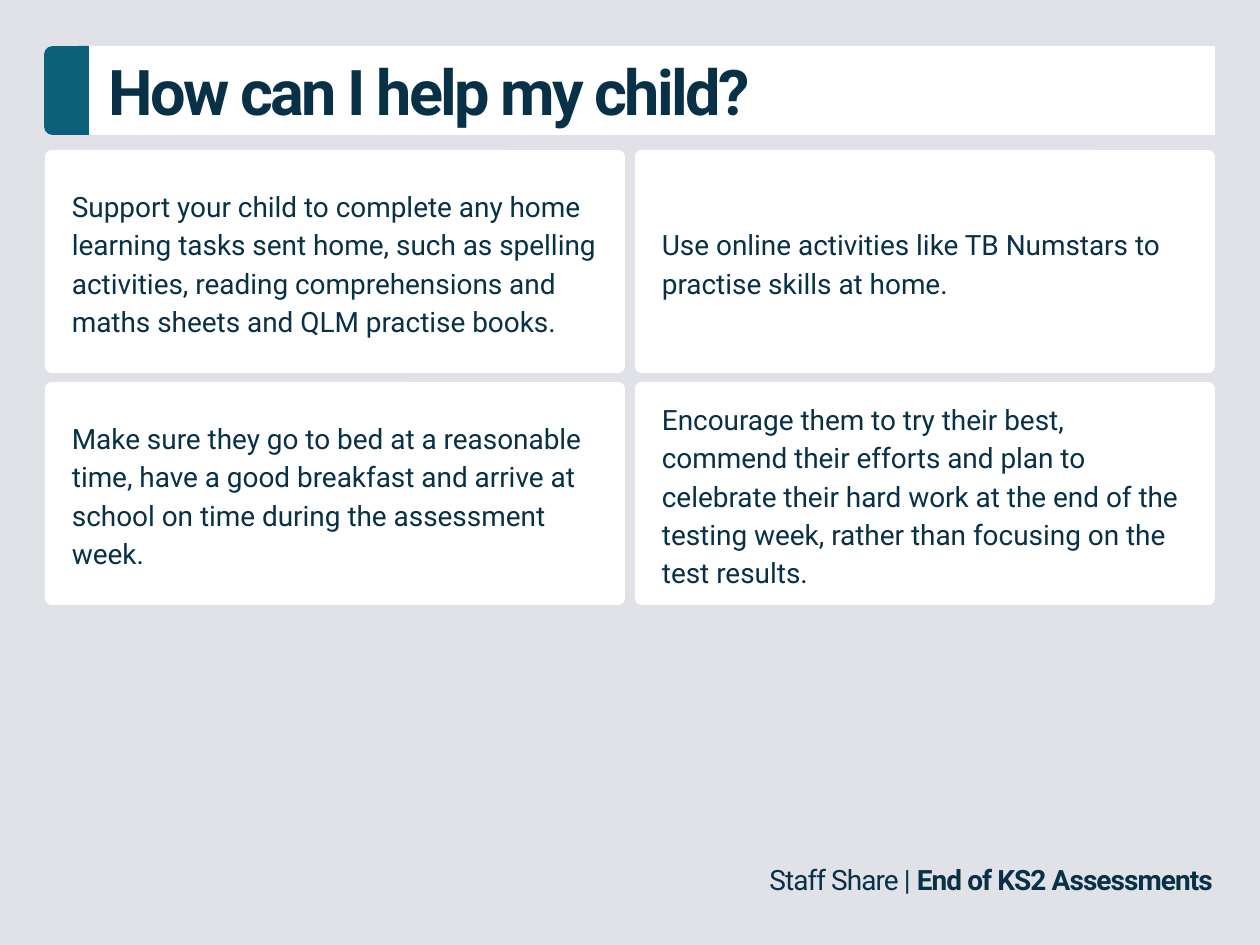
from pptx import Presentation
from pptx.dml.color import RGBColor
from pptx.enum.shapes import MSO_SHAPE
from pptx.enum.text import MSO_ANCHOR, MSO_AUTO_SIZE, PP_ALIGN
from pptx.util import Emu, Pt

NAVY = RGBColor(0x08, 0x31, 0x47)
TEAL = RGBColor(0x0D, 0x60, 0x7A)
WHITE = RGBColor(0xFF, 0xFF, 0xFF)
GREY = RGBColor(0xE1, 0xE2, 0xE7)


def px(*lengths):
    return [Emu(round(length * 914400 / 126)) for length in lengths]


def write(holder, *parts, size=16, bold=(False,), spacing=0, line=1.0, after=0,
          align=PP_ALIGN.LEFT, anchor=MSO_ANCHOR.MIDDLE, insets=(25, 25, 25, 25)):
    frame = holder.text_frame
    frame.word_wrap = True
    frame.auto_size = MSO_AUTO_SIZE.NONE
    frame.vertical_anchor = anchor
    frame.margin_left, frame.margin_top, frame.margin_right, frame.margin_bottom = px(*insets)
    paragraph = frame.paragraphs[0]
    paragraph.alignment = align
    paragraph.line_spacing = line
    paragraph.space_before = Pt(0)
    paragraph.space_after = Pt(after)
    for words, heavy in zip(parts, bold):
        run = paragraph.add_run()
        run.text = words
        run.font.name = "Roboto"
        run.font.size = Pt(size)
        run.font.bold = heavy
        run.font.color.rgb = NAVY
        run._r.get_or_add_rPr().set("spc", str(round(spacing * 100)))


deck = Presentation()
deck.slide_width, deck.slide_height = px(1260, 945)
slide = deck.slides.add_slide(deck.slide_layouts[5])
slide.background.fill.solid()
slide.background.fill.fore_color.rgb = GREY

footer = slide.shapes.add_textbox(*px(247, 857, 979, 47))
write(footer, "Staff Share | ", "End of KS2 Assessments", bold=(False, True),
      spacing=-0.5, after=12, align=PP_ALIGN.RIGHT, anchor=MSO_ANCHOR.TOP,
      insets=(13, 6, 13, 6))

title = slide.shapes.title
title.left, title.top, title.width, title.height = px(89, 46, 1126, 89)
title.fill.solid()
title.fill.fore_color.rgb = WHITE
write(title, "How can I help my child?", size=36, bold=(True,), spacing=-1.5,
      line=0.9, insets=(20, 10, 20, 0))

tab = slide.shapes.add_shape(MSO_SHAPE.ROUND_2_SAME_RECTANGLE, *px(22, 68, 89, 45))
tab.rotation = 270
tab.adjustments[0] = 0.19
tab.adjustments[1] = 0
tab.fill.solid()
tab.fill.fore_color.rgb = TEAL
tab.line.fill.background()
tab.shadow.inherit = False

tips = [
    "Support your child to complete any home learning tasks sent home, such as spelling "
    "activities, reading comprehensions and maths sheets and QLM practise books.",
    "Use online activities like TB Numstars to practise skills at home.",
    "Make sure they go to bed at a reasonable time, have a good breakfast and arrive at "
    "school on time during the assessment week.",
    "Encourage them to try their best, commend their efforts and plan to celebrate their "
    "hard work at the end of the testing week, rather than focusing on the test results.",
]
for index, tip in enumerate(tips):
    row, column = divmod(index, 2)
    card = slide.shapes.add_shape(MSO_SHAPE.ROUNDED_RECTANGLE,
                                  *px(45 + column * 590, 150 + row * 232, 580, 223))
    card.adjustments[0] = 0.03
    card.fill.solid()
    card.fill.fore_color.rgb = WHITE
    card.line.fill.background()
    card.shadow.inherit = False
    write(card, tip, line=1.14, after=3)

deck.save("out.pptx")
